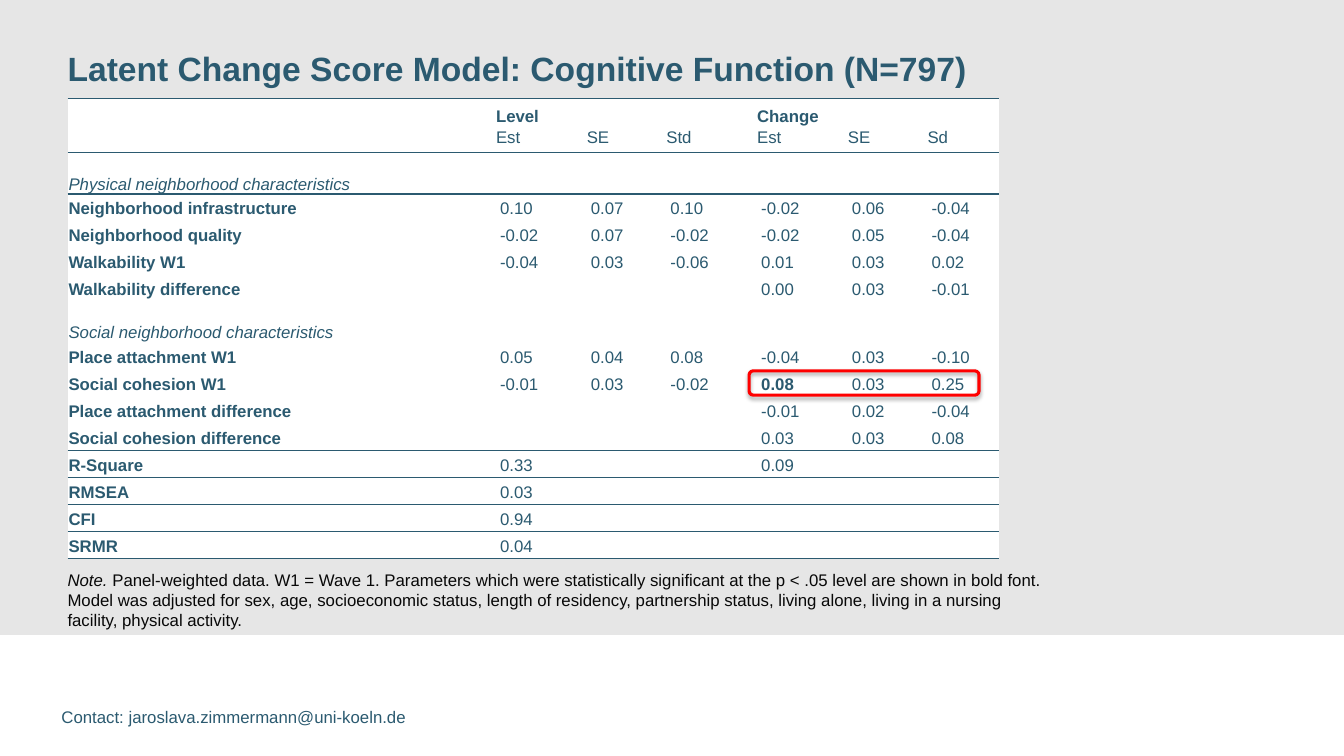
from lxml import etree
from pptx import Presentation
from pptx.dml.color import RGBColor
from pptx.enum.shapes import MSO_SHAPE
from pptx.enum.text import MSO_ANCHOR, MSO_AUTO_SIZE, PP_ALIGN
from pptx.oxml.ns import qn
from pptx.util import Inches, Pt

TOP, MIDDLE, BOTTOM = MSO_ANCHOR.TOP, MSO_ANCHOR.MIDDLE, MSO_ANCHOR.BOTTOM
NO_AUTOFIT = MSO_AUTO_SIZE.NONE
LEFT = PP_ALIGN.LEFT
RECTANGLE, ROUNDED = MSO_SHAPE.RECTANGLE, MSO_SHAPE.ROUNDED_RECTANGLE

TEAL, INK, GREY, WHITE, RED = "2B5A70", "080808", "E6E6E6", "FFFFFF", "FF0000"
FONT = "Arial"
PLAIN_TABLE_STYLE = "{2D5ABB26-0587-4C30-8999-92F81FD0307C}"

TITLE = "Latent Change Score Model: Cognitive Function (N=797)"
CONTACT = "Contact: jaroslava.zimmermann@uni-koeln.de"
NOTES = [
    [("Note. ", True),
     ("Panel-weighted data. W1 = Wave 1. Parameters which were statistically significant "
      "at the p < .05 level are shown in bold font.", False)],
    [("Model was adjusted for sex, age, socioeconomic status, length of residency, "
      "partnership status, living alone, living in a nursing facility, physical activity.", False)],
]
ROWS = [
    ["", "Level", "", "", "Change", "", ""],
    ["", "Est", "SE", "Std", "Est", "SE", "Sd"],
    ["Physical neighborhood characteristics"] + [""] * 6,
    ["Neighborhood infrastructure", "0.10", "0.07", "0.10", "-0.02", "0.06", "-0.04"],
    ["Neighborhood quality", "-0.02", "0.07", "-0.02", "-0.02", "0.05", "-0.04"],
    ["Walkability W1", "-0.04", "0.03", "-0.06", "0.01", "0.03", "0.02"],
    ["Walkability difference", "", "", "", "0.00", "0.03", "-0.01"],
    ["Social neighborhood characteristics"] + [""] * 6,
    ["Place attachment W1", "0.05", "0.04", "0.08", "-0.04", "0.03", "-0.10"],
    ["Social cohesion W1", "-0.01", "0.03", "-0.02", "0.08", "0.03", "0.25"],
    ["Place attachment difference", "", "", "", "-0.01", "0.02", "-0.04"],
    ["Social cohesion difference", "", "", "", "0.03", "0.03", "0.08"],
    ["R-Square", "0.33", "", "", "0.09", "", ""],
    ["RMSEA", "0.03"] + [""] * 5,
    ["CFI", "0.94"] + [""] * 5,
    ["SRMR", "0.04"] + [""] * 5,
]
SECTION_HEIGHTS = {2: 0.41, 7: 0.4}
RULES_ABOVE = {0, 2, 12, 13, 14, 16}
SIGNIFICANT = {(9, 4)}
COLUMN_WIDTHS = [4.24, 0.9, 0.79, 0.9, 0.9, 0.79, 0.72]
TABLE_LEFT, TABLE_TOP, TABLE_HEIGHT = 0.67, 0.98, 4.56


def color(value):
    return RGBColor.from_string(value)


def style_run(run, size=12, value=TEAL, bold=False, italic=False):
    run.font.name = FONT
    run.font.size = Pt(size)
    run.font.color.rgb = color(value)
    run.font.bold = bold
    run.font.italic = italic


def prepare_frame(frame):
    frame.margin_left = frame.margin_right = frame.margin_top = frame.margin_bottom = 0
    frame.word_wrap = True
    frame.auto_size = NO_AUTOFIT
    frame.vertical_anchor = TOP
    return frame


def add_text_box(slide, left, top, width, height):
    box = slide.shapes.add_textbox(Inches(left), Inches(top), Inches(width), Inches(height))
    return prepare_frame(box.text_frame)


def add_border(properties, position, tag):
    line = etree.Element(qn(tag), w=str(Pt(1)))
    fill = etree.SubElement(line, qn("a:solidFill"))
    etree.SubElement(fill, qn("a:srgbClr"), val=TEAL)
    properties.insert(position, line)


def format_cell(cell, row, column):
    cell.fill.solid()
    cell.fill.fore_color.rgb = color(WHITE)
    cell.margin_top = cell.margin_bottom = 0
    is_label = column == 0 or row < 2
    cell.margin_left = cell.margin_right = Inches(0.01 if is_label else 0.05)
    is_section = row in SECTION_HEIGHTS
    if row == 1:
        cell.vertical_anchor = TOP
    else:
        cell.vertical_anchor = BOTTOM if row == 0 or is_section else MIDDLE

    cell.text_frame.text = ROWS[row][column]
    paragraph = cell.text_frame.paragraphs[0]
    paragraph.line_spacing = 1.15
    bold = row == 0 or (column == 0 and not is_section) or (row, column) in SIGNIFICANT
    for run in paragraph.runs:
        style_run(run, bold=bold, italic=is_section)
    if not paragraph.runs:
        etree.SubElement(paragraph._p, qn("a:endParaRPr"), sz="1200")

    properties = cell._tc.get_or_add_tcPr()
    position = 0
    for tag, edge in (("a:lnT", row), ("a:lnB", row + 1)):
        if edge in RULES_ABOVE:
            add_border(properties, position, tag)
            position += 1


def add_results_table(slide):
    frame = slide.shapes.add_table(
        len(ROWS), len(COLUMN_WIDTHS), Inches(TABLE_LEFT), Inches(TABLE_TOP),
        Inches(sum(COLUMN_WIDTHS)), Inches(TABLE_HEIGHT))
    table = frame.table
    table.first_row = table.horz_banding = False
    table._tbl.tblPr.find(qn("a:tableStyleId")).text = PLAIN_TABLE_STYLE
    for column, width in zip(table.columns, COLUMN_WIDTHS):
        column.width = Inches(width)
    plain_height = (TABLE_HEIGHT - sum(SECTION_HEIGHTS.values())) / (len(ROWS) - len(SECTION_HEIGHTS))
    for row in range(len(ROWS)):
        table.rows[row].height = Inches(SECTION_HEIGHTS.get(row, plain_height))
        for column in range(len(COLUMN_WIDTHS)):
            format_cell(table.cell(row, column), row, column)
    for first in (1, 4):
        table.cell(0, first).merge(table.cell(0, first + 2))


def add_highlight(slide):
    shape = slide.shapes.add_shape(ROUNDED, Inches(7.43), Inches(3.68), Inches(2.28), Inches(0.24))
    shape.fill.background()
    shape.line.color.rgb = color(RED)
    shape.line.width = Pt(2.25)
    shape.shadow.inherit = False
    effects = shape.element.spPr.find(qn("a:effectLst"))
    shadow = etree.SubElement(effects, qn("a:outerShdw"), blurRad=str(Pt(3.1)),
                              dist=str(Pt(1.8)), dir="5400000", rotWithShape="0")
    shade = etree.SubElement(shadow, qn("a:srgbClr"), val="000000")
    etree.SubElement(shade, qn("a:alpha"), val="35000")


def main():
    presentation = Presentation()
    presentation.slide_width = Inches(13.33)
    presentation.slide_height = Inches(7.5)
    slide = presentation.slides.add_slide(presentation.slide_layouts[5])

    title = slide.shapes.title
    title.left, title.top, title.width, title.height = map(Inches, (0.67, 0.51, 12.08, 0.36))
    prepare_frame(title.text_frame).text = TITLE
    paragraph = title.text_frame.paragraphs[0]
    paragraph.alignment = LEFT
    paragraph.line_spacing = Pt(26)
    style_run(paragraph.runs[0], 24, bold=True)

    band = slide.shapes.add_shape(RECTANGLE, 0, 0, presentation.slide_width, Inches(6.3))
    band.fill.solid()
    band.fill.fore_color.rgb = color(GREY)
    band.line.fill.background()
    band.shadow.inherit = False
    title.element.addprevious(band.element)

    contact = add_text_box(slide, 0.61, 7.03, 3.5, 0.18)
    contact.text = CONTACT
    contact.paragraphs[0].line_spacing = Pt(13)
    style_run(contact.paragraphs[0].runs[0])

    add_results_table(slide)

    note = add_text_box(slide, 0.67, 5.65, 9.7, 0.61)
    for index, parts in enumerate(NOTES):
        paragraph = note.add_paragraph() if index else note.paragraphs[0]
        for text, italic in parts:
            run = paragraph.add_run()
            run.text = text
            style_run(run, value=INK, italic=italic)

    add_highlight(slide)
    presentation.save("out.pptx")


if __name__ == "__main__":
    main()
